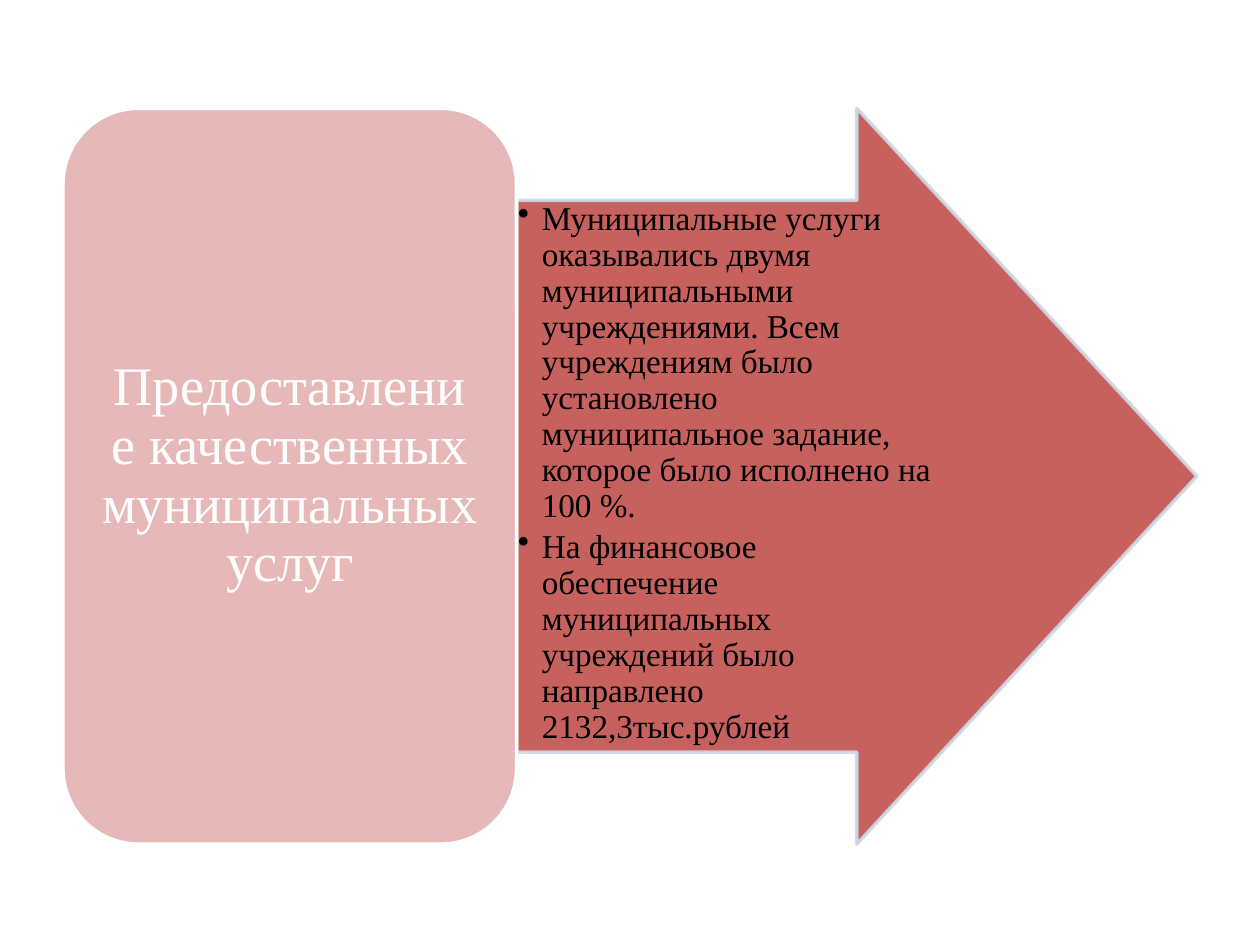
"""Build a slide with a rounded label and an arrow listing municipal service results."""
from lxml import etree
from pptx import Presentation
from pptx.dml.color import RGBColor
from pptx.enum.shapes import MSO_SHAPE
from pptx.enum.text import MSO_ANCHOR, PP_ALIGN
from pptx.oxml.ns import qn
from pptx.util import Inches, Pt

ARROW, ROUNDED = MSO_SHAPE.RIGHT_ARROW, MSO_SHAPE.ROUNDED_RECTANGLE
TOP, MIDDLE = MSO_ANCHOR.TOP, MSO_ANCHOR.MIDDLE
LEFT, CENTER = PP_ALIGN.LEFT, PP_ALIGN.CENTER

LABEL = ["Предоставление качественных муниципальных услуг"]
RESULTS = [
    "Муниципальные услуги оказывались двумя муниципальными учреждениями. "
    "Всем учреждениям было установлено муниципальное задание, "
    "которое было исполнено на 100 %.",
    "На финансовое обеспечение муниципальных учреждений было направлено 2132,3тыс.рублей",
]
COLORS = {"arrow": "C0504D", "arrow_line": "D0D8E8", "label": "E6B9B8",
          "white": "FFFFFF", "black": "000000"}
FONT = "Times New Roman"
TOP_EDGE, HEIGHT = 0.86, 5.84
LABEL_LEFT, LABEL_WIDTH, ARROW_WIDTH = 0.5, 3.6, 5.4
ARROW_LEFT = LABEL_LEFT + LABEL_WIDTH
SHAFT_RATIO, HEAD_RATIO = 0.75, 0.5
LABEL_INSET = 0.18
BULLET_INDENT = 0.19


def set_alpha(color_format, percent):
    color = color_format._xFill.find(qn("a:srgbClr"))
    etree.SubElement(color, qn("a:alpha"), val=str(percent * 1000))


def add_block(slide, kind, left, width, fill, line, alpha=100):
    block = slide.shapes.add_shape(kind, Inches(left), Inches(TOP_EDGE),
                                   Inches(width), Inches(HEIGHT))
    block.shadow.inherit = False
    block.line.width = Pt(2)
    for paint, name in ((block.fill, fill), (block.line.fill, line)):
        paint.solid()
        paint.fore_color.rgb = RGBColor.from_string(COLORS[name])
    if alpha < 100:
        for color in block._element.spPr.iter(qn("a:srgbClr")):
            etree.SubElement(color, qn("a:alpha"), val=str(alpha * 1000))
    return block


def add_bullet(para):
    properties = para._p.get_or_add_pPr()
    properties.set("marL", str(Inches(BULLET_INDENT)))
    properties.set("indent", str(-Inches(BULLET_INDENT)))
    etree.SubElement(properties, qn("a:buChar"), char="•")


def add_text(slide, place, insets, lines, size, color, anchor, align, bulleted=False):
    box = slide.shapes.add_textbox(*(Inches(value) for value in place))
    frame = box.text_frame
    frame.word_wrap = True
    frame.vertical_anchor = anchor
    frame.margin_left = frame.margin_right = Inches(insets[0])
    frame.margin_top = frame.margin_bottom = Inches(insets[1])
    for index, line in enumerate(lines):
        para = frame.add_paragraph() if index else frame.paragraphs[0]
        para.text = line
        para.alignment = align
        para.line_spacing = 0.9
        para.space_after = Pt(3)
        if bulleted:
            add_bullet(para)
        para.font.name = FONT
        para.font.size = Pt(size)
        para.font.color.rgb = RGBColor.from_string(COLORS[color])


def main():
    deck = Presentation()
    deck.slide_width, deck.slide_height = Inches(10), Inches(7.5)
    slide = deck.slides.add_slide(deck.slide_layouts[6])

    arrow = add_block(slide, ARROW, ARROW_LEFT, ARROW_WIDTH, "arrow", "arrow_line", 90)
    arrow.adjustments[0], arrow.adjustments[1] = SHAFT_RATIO, HEAD_RATIO
    shaft_height = HEIGHT * SHAFT_RATIO
    shaft_top = TOP_EDGE + (HEIGHT - shaft_height) / 2
    add_text(slide, (ARROW_LEFT, shaft_top, 3.38, shaft_height), (0.01, 0.01),
             RESULTS, 19, "black", TOP, LEFT, bulleted=True)

    add_block(slide, ROUNDED, LABEL_LEFT, LABEL_WIDTH, "label", "white")
    add_text(slide, (LABEL_LEFT + LABEL_INSET, TOP_EDGE + LABEL_INSET,
                     LABEL_WIDTH - 2 * LABEL_INSET, HEIGHT - 2 * LABEL_INSET),
             (0.13, 0.06), LABEL, 31, "white", MIDDLE, CENTER)
    deck.save("out.pptx")


if __name__ == "__main__":
    main()
